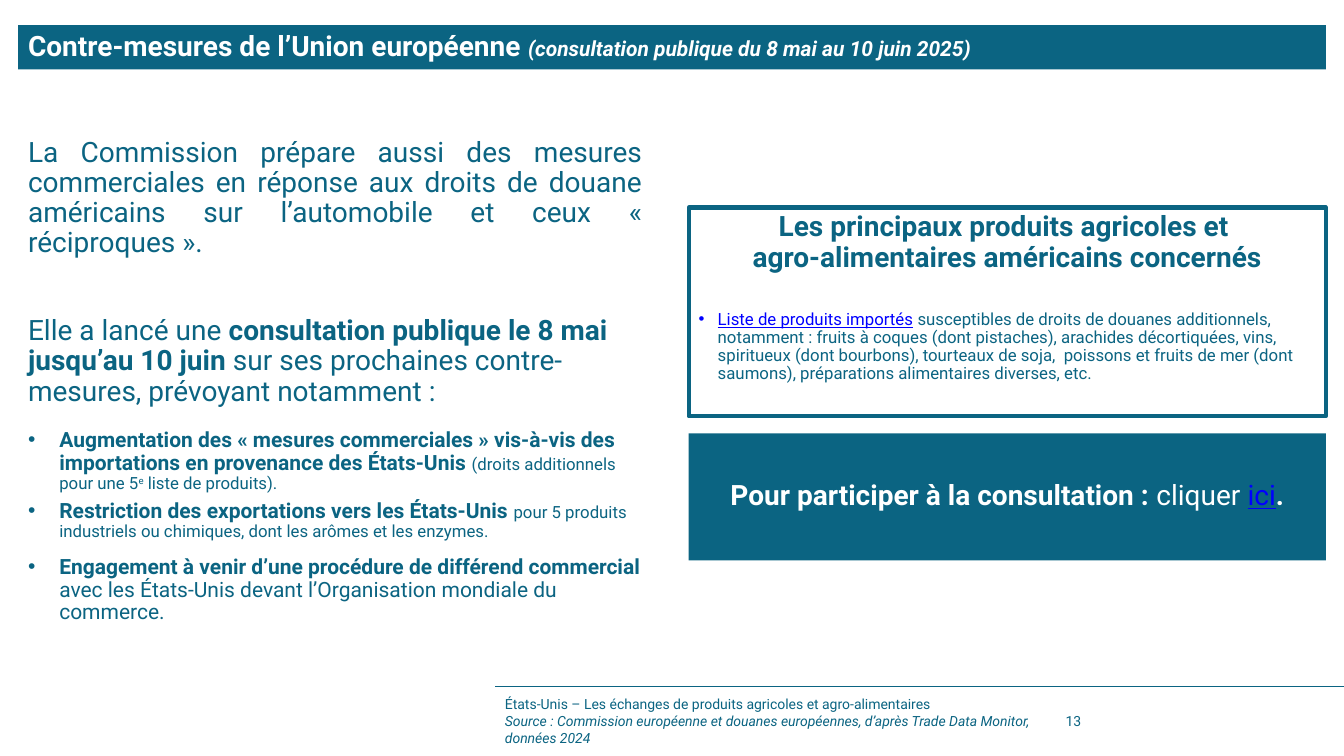
"""Builds the slide on the European Union's counter-measures."""
from dataclasses import dataclass
from typing import Optional

from lxml import etree
from pptx import Presentation
from pptx.dml.color import RGBColor
from pptx.enum.shapes import MSO_CONNECTOR as Connector, MSO_SHAPE as Preset
from pptx.enum.text import MSO_ANCHOR as Anchor, PP_ALIGN as Align
from pptx.oxml.ns import qn
from pptx.util import Inches, Pt

TEAL, WHITE, LINK = "0B6482", "FFFFFF", "0000FF"
FONT = "Roboto"


@dataclass
class Span:
    text: str
    size: float = 20
    color: str = TEAL
    bold: bool = False
    italic: bool = False
    underline: bool = False
    superscript: bool = False


@dataclass
class Para:
    spans: list[Span]
    before: float = 0
    align: Align = Align.LEFT
    spacing: float = 0.9
    bullet_indent: float = 0


@dataclass
class Block:
    left: float
    top: float
    width: float
    height: float
    paras: list[Para]
    anchor: Anchor = Anchor.MIDDLE
    fill: Optional[str] = None
    outline: Optional[str] = None


def rgb(color: str) -> RGBColor:
    return RGBColor.from_string(color)


def add_bullet(paragraph, indent: float) -> None:
    props = paragraph._p.get_or_add_pPr()
    props.set("marL", str(Inches(indent)))
    props.set("indent", str(-Inches(indent)))
    etree.SubElement(props, qn("a:buFont")).set("typeface", "Arial")
    etree.SubElement(props, qn("a:buChar")).set("char", "•")


def add_span(paragraph, span: Span) -> None:
    for index, line in enumerate(span.text.split("\n")):
        if index:
            paragraph.add_line_break()
        run = paragraph.add_run()
        run.text = line
        font = run.font
        font.name, font.size = FONT, Pt(span.size)
        font.bold, font.italic, font.underline = span.bold, span.italic, span.underline
        font.color.rgb = rgb(span.color)
        if span.superscript:
            run._r.get_or_add_rPr().set("baseline", "30000")


def draw_block(slide, block: Block) -> None:
    place = [Inches(v) for v in (block.left, block.top, block.width, block.height)]
    if block.fill or block.outline:
        shape = slide.shapes.add_shape(Preset.RECTANGLE, *place)
        shape.shadow.inherit = False
        if block.fill:
            shape.fill.solid()
            shape.fill.fore_color.rgb = rgb(block.fill)
        else:
            shape.fill.background()
        if block.outline:
            shape.line.color.rgb = rgb(block.outline)
            shape.line.width = Pt(3)
        else:
            shape.line.fill.background()
    else:
        shape = slide.shapes.add_textbox(*place)
    frame = shape.text_frame
    frame.word_wrap = True
    frame.vertical_anchor = block.anchor
    for index, para in enumerate(block.paras):
        paragraph = frame.add_paragraph() if index else frame.paragraphs[0]
        paragraph.alignment = para.align
        paragraph.line_spacing = para.spacing
        paragraph.space_before = Pt(para.before)
        if para.bullet_indent:
            add_bullet(paragraph, para.bullet_indent)
        for span in para.spans:
            add_span(paragraph, span)


def draw_footer_rule(slide) -> None:
    rule = slide.shapes.add_connector(
        Connector.STRAIGHT, Inches(13.33), Inches(6.81), Inches(4.91), Inches(6.81))
    rule.line.color.rgb = rgb(TEAL)
    rule.line.width = Pt(0.5)
    etree.SubElement(rule._element.spPr, qn("a:effectLst"))


def measure(spans: list[Span], before: float = 5) -> Para:
    return Para(spans, before, bullet_indent=0.31)


FOOTER = Block(4.91, 6.95, 5.43, 0.4, [
    Para([Span("États-Unis – Les échanges de produits agricoles et agro-alimentaires", 10)],
         spacing=1),
    Para([Span("Source : Commission européenne et douanes européennes, d’après "
               "Trade Data Monitor, données 2024", 10, italic=True)], spacing=1),
])
PAGE_NUMBER = Block(10.47, 6.95, 0.99, 0.4, [Para([Span("13", 10)], spacing=1)])
TITLE = Block(0.18, 0.25, 12.97, 0.44, [Para([
    Span("Contre-mesures de l’Union européenne ", color=WHITE, bold=True),
    Span("(consultation publique du 8 mai au 10 juin 2025)", 15, WHITE, bold=True, italic=True),
])], fill=TEAL)
MEASURES = Block(0.18, 1.32, 6.29, 4.86, [
    Para([Span("La Commission prépare aussi des mesures commerciales en réponse aux droits "
               "de douane américains sur l’automobile et ceux « réciproques ». ")],
         align=Align.JUSTIFY),
    Para([Span("Elle a lancé une "),
          Span("consultation publique le 8 mai jusqu’au 10 juin ", bold=True),
          Span("sur ses prochaines contre-mesures, prévoyant notamment :")], before=41),
    measure([Span("Augmentation des « mesures commerciales » vis-à-vis des importations "
                  "en provenance des États-Unis ", 15, bold=True),
             Span("(droits additionnels pour une 5", 12),
             Span("e", 12, superscript=True),
             Span(" liste de produits).", 12)], before=16),
    measure([Span("Restriction des exportations vers les États-Unis ", 15, bold=True),
             Span("pour 5 produits industriels ou chimiques, dont les arômes et les enzymes.",
                  12)]),
    measure([Span("Engagement à venir d’une procédure de différend commercial ", 15, bold=True),
             Span("avec les États-Unis devant l’Organisation mondiale du commerce.", 15)],
            before=11),
], anchor=Anchor.TOP)
PRODUCTS = Block(6.83, 2.06, 6.32, 2.07, [
    Para([Span("Les principaux produits agricoles et \nagro-alimentaires américains concernés",
               bold=True)], align=Align.CENTER),
    Para([Span("Liste de produits importés", 12, LINK, underline=True),
          Span(" ", 12, bold=True),
          Span("susceptibles de droits de douanes additionnels, notamment : fruits à coques "
               "(dont pistaches), arachides décortiquées, vins, spiritueux (dont bourbons), "
               "tourteaux de soja,  poissons et fruits de mer (dont saumons), préparations "
               "alimentaires diverses, etc.", 12)], before=27, bullet_indent=0.19),
], anchor=Anchor.TOP, outline=TEAL)
CALL_TO_ACTION = Block(6.83, 4.3, 6.32, 1.26, [Para([
    Span("Pour participer à la consultation : ", color=WHITE, bold=True),
    Span("cliquer ", color=WHITE),
    Span("ici", color=LINK, underline=True),
    Span(".", color=WHITE, bold=True),
], align=Align.CENTER)], fill=TEAL)


def main() -> None:
    deck = Presentation()
    deck.slide_width, deck.slide_height = Inches(13.33), Inches(7.5)
    slide = deck.slides.add_slide(deck.slide_layouts[6])
    draw_footer_rule(slide)
    for block in (FOOTER, PAGE_NUMBER, TITLE, MEASURES, PRODUCTS, CALL_TO_ACTION):
        draw_block(slide, block)
    deck.save("out.pptx")


if __name__ == "__main__":
    main()
